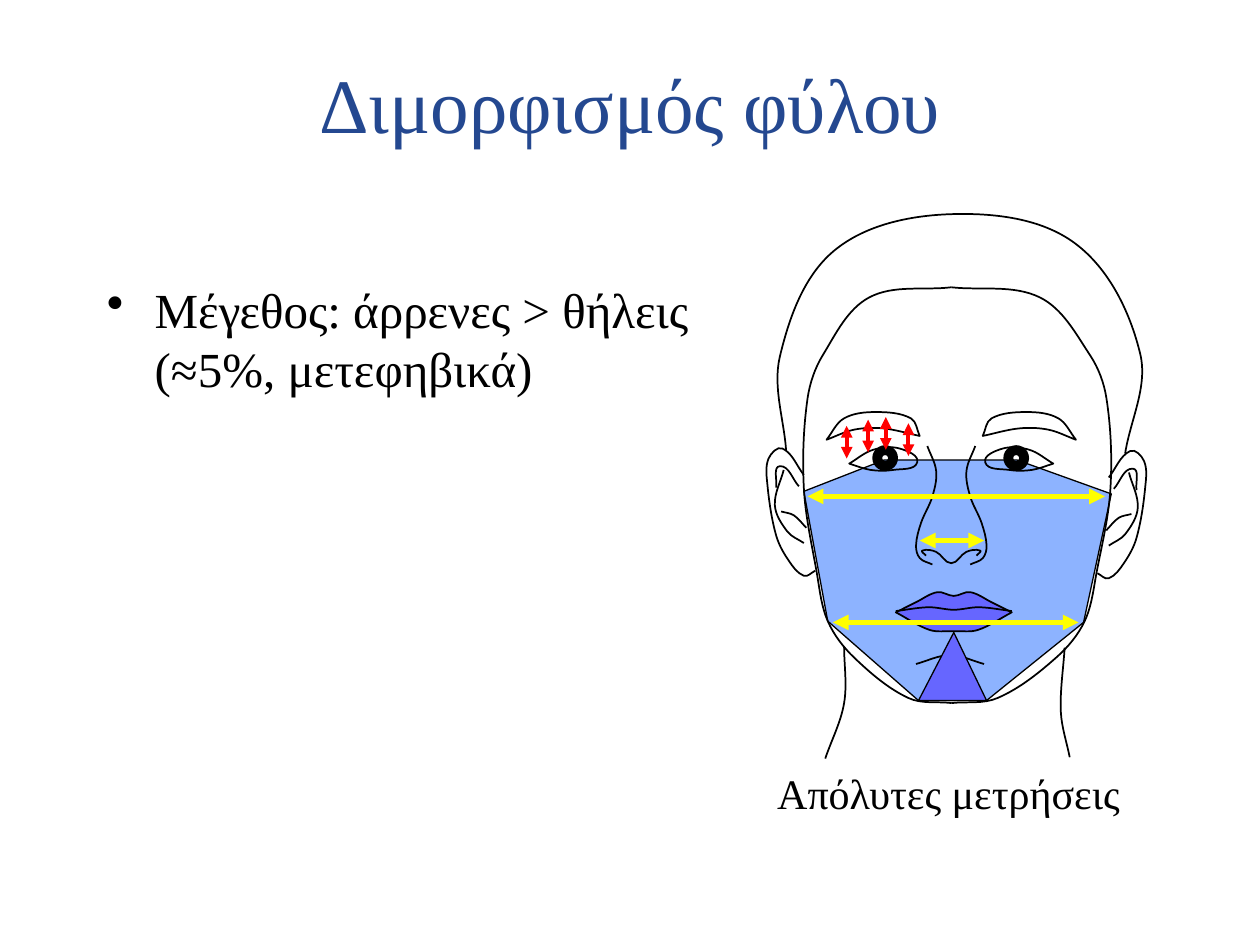
from math import dist

from pptx import Presentation
from pptx.dml.color import RGBColor
from pptx.enum.shapes import MSO_CONNECTOR, MSO_SHAPE
from pptx.enum.text import MSO_ANCHOR, PP_ALIGN
from pptx.oxml.ns import qn
from pptx.util import Inches, Pt
from lxml.etree import SubElement

COLORS = {
    "title": "244890", "black": "000000", "mask": "8DB3FF",
    "accent": "6666FF", "yellow": "FFFF00", "red": "FF0000",
}
FONT = "Times New Roman"

presentation = Presentation()
presentation.slide_width, presentation.slide_height = Inches(10), Inches(7.5)
slide = presentation.slides.add_slide(presentation.slide_layouts[6])


def add_outline(points, fill=None, width=1, curved=True):
    """Draw a smooth curve through the points (a repeated point is a corner) or a polygon."""
    path_points = points
    if curved:
        # Two Bezier handles per segment, parallel to the line between the neighbours
        path_points = [points[0]]
        padded = [points[0], *points, points[-1]]
        for before, start, end, after in zip(padded, padded[1:], padded[2:], padded[3:]):
            if start == end:
                continue
            reach = dist(start, end) / 3
            lead, trail = reach / dist(before, end), reach / dist(start, after)
            path_points += [
                tuple(s + (e - b) * lead for s, e, b in zip(start, end, before)),
                tuple(e - (a - s) * trail for s, e, a in zip(start, end, after)),
                end,
            ]
    corners = [(Inches(x), Inches(y)) for x, y in path_points]
    builder = slide.shapes.build_freeform(*corners[0])
    builder.add_line_segments(corners[1:], close=not curved or points[0] == points[-1])
    shape = builder.convert_to_shape()
    shape.shadow.inherit = False
    shape.line.color.rgb = RGBColor.from_string(COLORS["black"])
    shape.line.width = Pt(width)
    if fill:
        shape.fill.solid()
        shape.fill.fore_color.rgb = RGBColor.from_string(COLORS[fill])
    else:
        shape.fill.background()
    if curved:
        segments = list(shape._element.iter(qn("a:lnTo")))
        for first, second, third in zip(*[iter(segments)] * 3):
            first.tag = qn("a:cubicBezTo")
            for segment in (second, third):
                first.append(segment[0])
                segment.getparent().remove(segment)


def add_text(text, box, size, color, wrap=True):
    """Add a text box with one run and return its frame and paragraph."""
    frame = slide.shapes.add_textbox(*[Inches(v) for v in box]).text_frame
    frame.word_wrap = wrap
    paragraph = frame.paragraphs[0]
    run = paragraph.add_run()
    run.text = text
    run.font.name, run.font.size = FONT, Pt(size)
    run.font.color.rgb = RGBColor.from_string(COLORS[color])
    return frame, paragraph


# Measured area of the face
add_outline([(6.38, 3.9), (7.02, 3.65), (8.07, 3.65), (8.82, 3.92), (8.6, 4.94),
             (7.83, 5.56), (7.29, 5.56), (6.57, 4.93)], "mask", 0.75, curved=False)

# Title
frame, paragraph = add_text("Διμορφισμός φύλου", (0.75, 0.19, 8.5, 1.25), 44, "title")
frame.vertical_anchor = MSO_ANCHOR.MIDDLE
paragraph.alignment = PP_ALIGN.CENTER

# Bullet
frame, paragraph = add_text("Μέγεθος: άρρενες > θήλεις (≈5%, μετεφηβικά)",
                            (0.75, 2.17, 5.3, 4.5), 28, "black")
paragraph.space_before = Pt(5.6)
properties = paragraph._p.get_or_add_pPr()
properties.set("marL", str(Inches(0.38)))
properties.set("indent", str(-Inches(0.38)))
SubElement(properties, qn("a:buChar")).set("char", "•")

# Features with a separate twin: mirror axis, horizontal stretch, vertical shift, left points
EAR = (7.59, 1, 0.02)
paired_features = [
    # Nose side, eye, eyebrow
    (7.55, 1, 0, [(7.36, 3.54), (7.43, 3.74), (7.4, 3.94), (7.31, 4.15), (7.27, 4.33),
                  (7.3, 4.43), (7.4, 4.48)]),
    (7.55, 1, 0, [(6.74, 3.68), (6.93, 3.57), (7.14, 3.56), (7.28, 3.67), (7.09, 3.73),
                  (6.91, 3.73), (6.74, 3.68)]),
    (7.55, 1, 0, [(7.3, 3.46), (7.01, 3.4), (6.78, 3.41), (6.56, 3.49), (6.56, 3.49),
                  (6.7, 3.32), (6.95, 3.27), (7.23, 3.32), (7.3, 3.46)]),
    # Ear, rim, fold, crease
    (*EAR, [(6.38, 3.77), (6.21, 3.56), (6.1, 3.64), (6.09, 3.84), (6.16, 4.25),
            (6.26, 4.45), (6.38, 4.57), (6.47, 4.53)]),
    (*EAR, [(6.34, 3.86), (6.19, 3.7), (6.16, 3.87)]),
    (*EAR, [(6.22, 3.73), (6.15, 4.01), (6.25, 4.22), (6.38, 4.31)]),
    (*EAR, [(6.4, 4.19), (6.3, 4.09), (6.2, 4.06)]),
    # Face outline, wider on the right
    (7.55, 1.08, 0, [(7.55, 2.28), (6.9, 2.36), (6.53, 2.82), (6.41, 3.16), (6.38, 3.87),
                     (6.48, 4.53), (6.57, 4.93), (6.78, 5.22), (7.21, 5.54), (7.55, 5.58)]),
]
for axis, stretch, shift, points in paired_features:
    add_outline(points)
    add_outline([(axis + (axis - x) * stretch, y + shift) for x, y in points])

# Symmetric features: mirror axis, fill, left half ending on the axis
symmetric_features = [
    # Lips, lip line, nostrils, chin crease
    (7.57, "accent", [(7.57, 5.01), (7.38, 5), (7.11, 4.86), (7.11, 4.86), (7.27, 4.78),
                      (7.44, 4.7), (7.57, 4.73)]),
    (7.57, None, [(7.11, 4.85), (7.37, 4.82), (7.57, 4.84)]),
    (7.55, None, [(7.35, 4.41), (7.32, 4.37), (7.43, 4.38), (7.55, 4.47)]),
    (7.54, None, [(7.27, 5.27), (7.54, 5.2)]),
]
for axis, fill, half in symmetric_features:
    add_outline(half + [(2 * axis - x, y) for x, y in half[-2::-1]], fill)

# Neck and skull
add_outline([(6.7, 5.13), (6.7, 5.58), (6.55, 6.02)])
add_outline([(8.45, 5.14), (8.42, 5.65), (8.49, 6.01)])
add_outline([(6.24, 3.58), (6.19, 2.83), (6.62, 1.99), (7.55, 1.7), (8.53, 1.93),
             (9.05, 2.81), (8.93, 3.6)])

# Pupils
for left in (6.93, 7.97):
    pupil = slide.shapes.add_shape(MSO_SHAPE.DONUT, Inches(left), Inches(3.54),
                                   Inches(0.19), Inches(0.19))
    pupil.adjustments[0] = 0.34
    pupil.shadow.inherit = False
    pupil.fill.solid()
    pupil.fill.fore_color.rgb = RGBColor.from_string(COLORS["black"])
    pupil.line.color.rgb = RGBColor.from_string(COLORS["black"])
    pupil.line.width = Pt(1)

# Chin triangle
add_outline([(7.57, 5.02), (7.83, 5.56), (7.29, 5.56)], "accent", 0.75, curved=False)

# Measuring arrows: widths in yellow, eyelid heights in red
arrows = [(left, y, right, y, "yellow", 3) for left, right, y in
          [(6.41, 8.77, 3.94), (6.61, 8.56, 4.94), (7.3, 7.81, 4.29)]]
arrows += [(x, bottom, x, bottom - 0.26, "red", 2.25) for x, bottom in
           [(7.21, 3.62), (7.03, 3.57), (6.89, 3.59), (6.72, 3.64)]]
for *ends, color, width in arrows:
    arrow = slide.shapes.add_connector(MSO_CONNECTOR.STRAIGHT, *[Inches(v) for v in ends])
    arrow.line.color.rgb = RGBColor.from_string(COLORS[color])
    arrow.line.width = Pt(width)
    line = arrow.line._get_or_add_ln()
    for end in ("a:headEnd", "a:tailEnd"):
        SubElement(line, qn(end)).set("type", "triangle")
    SubElement(arrow._element.spPr, qn("a:effectLst"))

# Caption
add_text("Απόλυτες μετρήσεις", (6.07, 6.04, 2.93, 0.5), 24, "black", wrap=False)

presentation.save("out.pptx")
